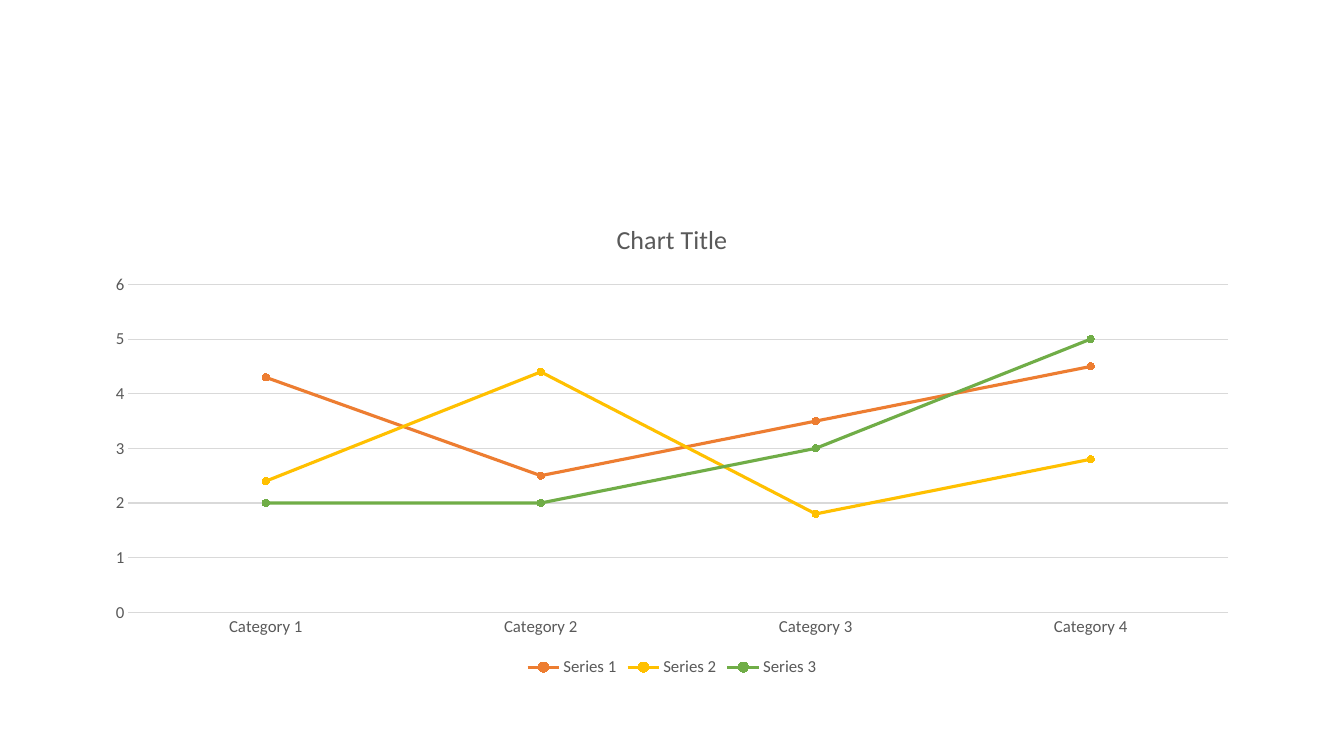
from dataclasses import dataclass

from pptx import Presentation
from pptx.chart.axis import CategoryAxis, ValueAxis
from pptx.chart.chart import Chart
from pptx.chart.data import CategoryChartData
from pptx.chart.series import LineSeries
from pptx.dml.color import RGBColor
from pptx.dml.line import LineFormat
from pptx.enum.chart import (
    XL_CHART_TYPE, XL_LEGEND_POSITION, XL_MARKER_STYLE, XL_TICK_MARK)
from pptx.slide import Slide
from pptx.text.text import Font
from pptx.util import Inches, Pt

LINE_MARKERS = XL_CHART_TYPE.LINE_MARKERS
BOTTOM = XL_LEGEND_POSITION.BOTTOM
CIRCLE = XL_MARKER_STYLE.CIRCLE
NO_TICK = XL_TICK_MARK.NONE

TEXT_GREY = RGBColor(0x59, 0x59, 0x59)
GRID_GREY = RGBColor(0xD9, 0xD9, 0xD9)
ORANGE = RGBColor(0xED, 0x7D, 0x31)
GOLD = RGBColor(0xFF, 0xC0, 0x00)
GREEN = RGBColor(0x70, 0xAD, 0x47)

PAGE_WIDTH, PAGE_HEIGHT = Inches(13.33), Inches(7.5)
BLANK_LAYOUT = 6

# Chart frame as shares of the page
SIDE_MARGIN = 0.069
CHART_TOP = 0.267
CHART_HEIGHT = 0.634

LABEL_FORMAT = {"name": "Calibri", "size": Pt(12), "bold": False}
TITLE_FORMAT = {**LABEL_FORMAT, "size": Pt(18.6)}
AXIS_FORMAT = {"major_tick_mark": NO_TICK, "minor_tick_mark": NO_TICK}
SCALE_FORMAT = {"minimum_scale": 0, "maximum_scale": 6, "major_unit": 1,
                "has_major_gridlines": True}
LEGEND_FORMAT = {"position": BOTTOM, "include_in_layout": False}
MARKER_FORMAT = {"style": CIRCLE, "size": 5}


@dataclass(frozen=True)
class Trend:
    name: str
    values: tuple[float, ...]
    color: RGBColor


CATEGORIES = [f"Category {number}" for number in range(1, 5)]
TRENDS = [
    Trend("Series 1", (4.3, 2.5, 3.5, 4.5), ORANGE),
    Trend("Series 2", (2.4, 4.4, 1.8, 2.8), GOLD),
    Trend("Series 3", (2, 2, 3, 5), GREEN),
]


def apply_format(target: object, values: dict[str, object]) -> None:
    for name, value in values.items():
        setattr(target, name, value)


def style_font(font: Font, values: dict[str, object]) -> None:
    apply_format(font, values)
    font.color.rgb = TEXT_GREY


def style_line(line: LineFormat, color: RGBColor, width: float) -> None:
    line.color.rgb = color
    line.width = Pt(width)


def style_axis(axis: CategoryAxis | ValueAxis) -> None:
    apply_format(axis, AXIS_FORMAT)
    style_font(axis.tick_labels.font, LABEL_FORMAT)


def style_series(series: LineSeries, color: RGBColor) -> None:
    series.smooth = False
    style_line(series.format.line, color, 2.25)
    marker = series.marker
    apply_format(marker, MARKER_FORMAT)
    marker.format.fill.solid()
    marker.format.fill.fore_color.rgb = color
    style_line(marker.format.line, color, 0.75)


def add_trend_chart(page: Slide) -> Chart:
    data = CategoryChartData()
    data.categories = CATEGORIES
    for trend in TRENDS:
        data.add_series(trend.name, trend.values)
    frame = page.shapes.add_chart(
        LINE_MARKERS,
        int(PAGE_WIDTH * SIDE_MARGIN), int(PAGE_HEIGHT * CHART_TOP),
        int(PAGE_WIDTH * (1 - 2 * SIDE_MARGIN)),
        int(PAGE_HEIGHT * CHART_HEIGHT), data)
    return frame.chart


def style_chart(chart: Chart) -> None:
    style_font(chart.font, LABEL_FORMAT)

    # Title and legend
    chart.has_title = True
    title = chart.chart_title
    title.include_in_layout = False
    title.text_frame.text = "Chart Title"
    style_font(title.text_frame.paragraphs[0].runs[0].font, TITLE_FORMAT)
    chart.has_legend = True
    apply_format(chart.legend, LEGEND_FORMAT)
    style_font(chart.legend.font, LABEL_FORMAT)

    # Axes and gridlines
    for axis in (chart.category_axis, chart.value_axis):
        style_axis(axis)
    style_line(chart.category_axis.format.line, GRID_GREY, 0.75)
    apply_format(chart.value_axis, SCALE_FORMAT)
    chart.value_axis.format.line.fill.background()
    style_line(chart.value_axis.major_gridlines.format.line, GRID_GREY, 0.75)

    # Lines
    plot = chart.plots[0]
    plot.vary_by_categories = False
    for series, trend in zip(plot.series, TRENDS):
        style_series(series, trend.color)


def main() -> None:
    deck = Presentation()
    deck.slide_width, deck.slide_height = PAGE_WIDTH, PAGE_HEIGHT
    page = deck.slides.add_slide(deck.slide_layouts[BLANK_LAYOUT])
    style_chart(add_trend_chart(page))
    deck.save("out.pptx")


if __name__ == "__main__":
    main()
